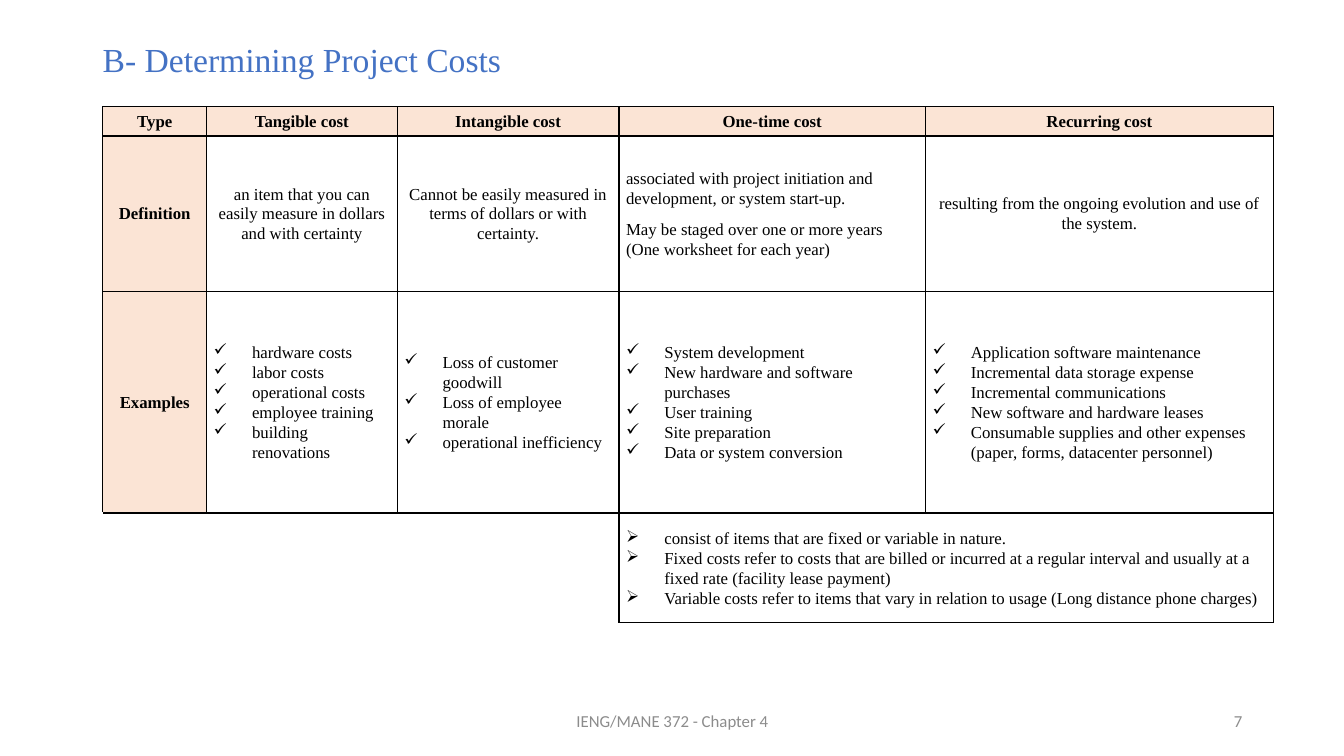
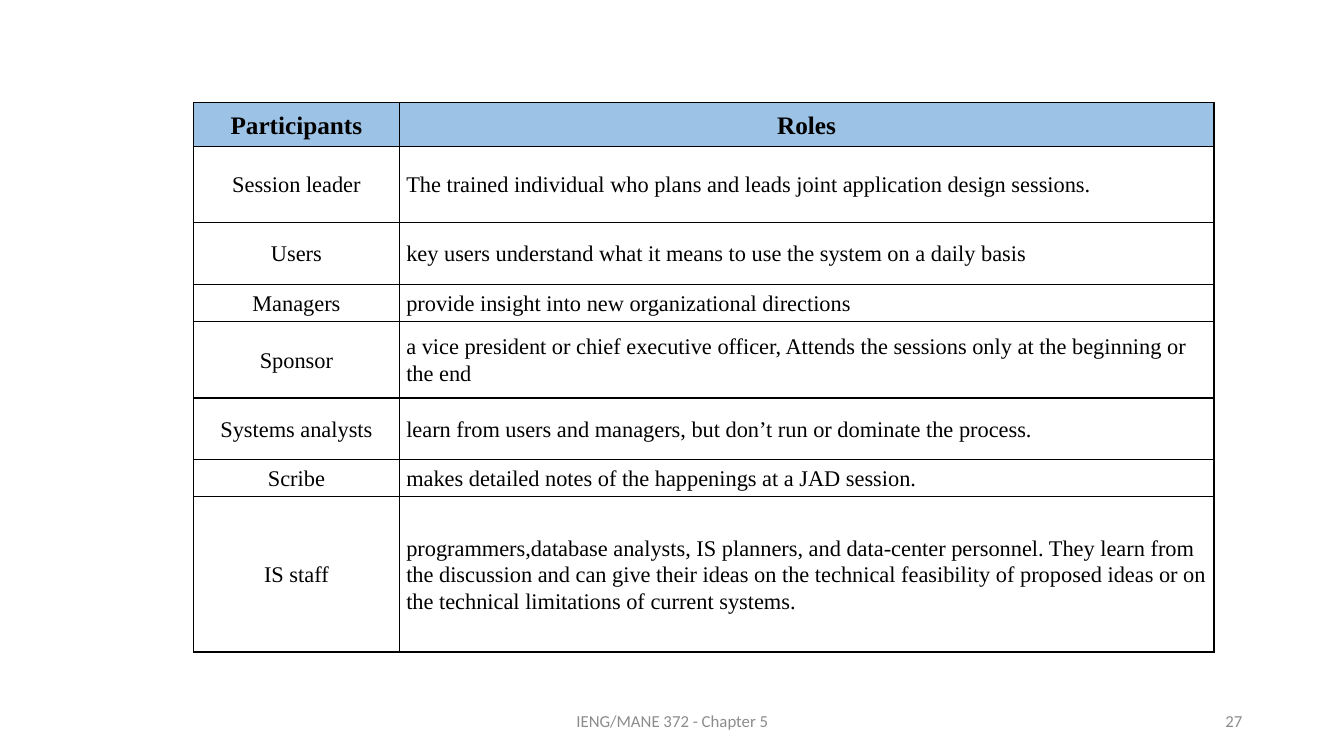
from dataclasses import dataclass

from lxml.etree import SubElement
from pptx import Presentation
from pptx.dml.color import RGBColor
from pptx.enum.text import MSO_ANCHOR, PP_ALIGN
from pptx.oxml.ns import qn
from pptx.util import Emu, Pt


@dataclass(frozen=True)
class Theme:
    serif: str = "Times New Roman"
    sans: str = "Calibri"
    title_color: str = "4472C4"
    footer_color: str = "8C8C8C"
    ink: str = "000000"
    paper: str = "FFFFFF"
    peach: str = "FBE4D5"
    sky: str = "9CC2E5"
    title: int = 24
    footer: int = 12
    cost_text: int = 12
    role_head: int = 18
    role_text: int = 16
    cell_line: float = 1.07
    cell_after: int = 8


@dataclass(frozen=True)
class Cell:
    lines: tuple = ()
    size: int = 12
    align: PP_ALIGN = PP_ALIGN.LEFT
    bold: bool = False
    fill: str = ""
    bullet: str = ""
    span: int = 1
    open_sides: str = ""


THEME = Theme()
PX = 9144  # 100 px to the inch
BULLET_INDENT = 38
CELL_INSET = 7


def heads(texts, size, fill):
    return [Cell((text,), size, PP_ALIGN.CENTER, True, fill) for text in texts]


def centred(text, size=THEME.cost_text):
    return Cell((text,), size, PP_ALIGN.CENTER)


def ticks(*lines):
    return Cell(lines, bullet="✓")


COST_TYPES = heads(
    ["Type", "Tangible cost", "Intangible cost", "One-time cost", "Recurring cost"],
    THEME.cost_text, THEME.peach)
DEFINITION, EXAMPLES = heads(["Definition", "Examples"], THEME.cost_text, THEME.peach)
COST_ROWS = [
    COST_TYPES,
    [
        DEFINITION,
        centred("an item that you can easily measure in dollars and with certainty"),
        centred("Cannot be easily measured in terms of dollars or with certainty."),
        Cell(("associated with project initiation and development, or system start-up.",
              "May be staged over one or more years (One worksheet for each year)")),
        centred("resulting from the ongoing evolution and use of the system."),
    ],
    [
        EXAMPLES,
        ticks("hardware costs", "labor costs", "operational costs",
              "employee training", "building renovations"),
        ticks("Loss of customer goodwill", "Loss of employee morale",
              "operational inefficiency"),
        ticks("System development", "New hardware and software purchases",
              "User training", "Site preparation", "Data or system conversion"),
        ticks("Application software maintenance", "Incremental data storage expense",
              "Incremental communications", "New software and hardware leases",
              "Consumable supplies and other expenses (paper, forms, datacenter personnel)"),
    ],
    [
        Cell(span=3, open_sides="LB"),
        Cell((
            "consist of items that are fixed or variable in nature.",
            "Fixed costs refer to costs that are billed or incurred at a regular interval "
            "and usually at a fixed rate (facility lease payment)",
            "Variable costs refer to items that vary in relation to usage "
            "(Long distance phone charges)",
        ), bullet="➢", span=2),
    ],
]

ROLES = [
    ("Session leader",
     "The trained individual who plans and leads joint application design sessions."),
    ("Users", "key users understand what it means to use the system on a daily basis"),
    ("Managers", "provide insight into new organizational directions"),
    ("Sponsor", "a vice president or chief executive officer, Attends the sessions only "
                "at the beginning or the end"),
    ("Systems analysts",
     "learn from users and managers, but don’t run or dominate the process."),
    ("Scribe", "makes detailed notes of the happenings at a JAD session."),
    ("IS staff",
     "programmers,database analysts, IS planners, and data-center personnel. They learn "
     "from the discussion and can give their ideas on the technical feasibility of "
     "proposed ideas or on the technical limitations of current systems."),
]
ROLE_ROWS = [heads(["Participants", "Roles"], THEME.role_head, THEME.sky)] + [
    [centred(name, THEME.role_text), Cell((role,), THEME.role_text)]
    for name, role in ROLES
]

SLIDES = [
    dict(title="B- Determining Project Costs", chapter=4, number=7, rows=COST_ROWS,
         left=102, top=106, widths=[103, 189, 220, 304, 345],
         heights=[29, 154, 220, 109]),
    dict(title="", chapter=5, number=27, rows=ROLE_ROWS,
         left=192, top=102, widths=[204, 808],
         heights=[43, 76, 61, 37, 76, 61, 37, 154]),
]


def px(length):
    return Emu(length * PX)


def write(para, text, *, size, font=THEME.serif, color=THEME.ink, bold=False,
          align=PP_ALIGN.LEFT, line=1.0, after=0, bullet=""):
    para.alignment = align
    para.line_spacing = line
    para.space_before = Pt(0)
    para.space_after = Pt(after)
    if bullet:
        properties = para._p.get_or_add_pPr()
        properties.set("marL", str(px(BULLET_INDENT)))
        properties.set("indent", str(-px(BULLET_INDENT)))
        SubElement(properties, qn("a:buChar"), char=bullet)
    span = para.add_run()
    span.text = text
    span.font.name = font
    span.font.size = Pt(size)
    span.font.bold = bold
    span.font.color.rgb = RGBColor.from_string(color)


def add_text(page, text, left, top, width, height, *, anchor=MSO_ANCHOR.MIDDLE, **style):
    box = page.shapes.add_textbox(px(left), px(top), px(width), px(height))
    frame = box.text_frame
    frame.word_wrap = True
    frame.vertical_anchor = anchor
    write(frame.paragraphs[0], text, **style)


def set_borders(table_cell, open_sides):
    """Rule all four sides; open sides take the paper colour."""
    properties = table_cell._tc.get_or_add_tcPr()
    for side in "LRTB":
        line = SubElement(properties, qn(f"a:ln{side}"), w=str(Pt(1)))
        fill = SubElement(line, qn("a:solidFill"))
        color = THEME.paper if side in open_sides else THEME.ink
        SubElement(fill, qn("a:srgbClr"), val=color)


def fill_cell(table_cell, cell):
    set_borders(table_cell, cell.open_sides)
    if cell.fill:
        table_cell.fill.solid()
        table_cell.fill.fore_color.rgb = RGBColor.from_string(cell.fill)
    else:
        table_cell.fill.background()
    table_cell.vertical_anchor = MSO_ANCHOR.MIDDLE
    table_cell.margin_left = table_cell.margin_right = px(CELL_INSET)
    table_cell.margin_top = table_cell.margin_bottom = 0


def write_cell(table_cell, cell):
    frame = table_cell.text_frame
    for index, text in enumerate(cell.lines):
        para = frame.add_paragraph() if index else frame.paragraphs[0]
        write(para, text, size=cell.size, bold=cell.bold, align=cell.align,
              line=THEME.cell_line, bullet=cell.bullet,
              after=0 if cell.bullet else THEME.cell_after)


def add_grid(page, rows, left, top, widths, heights):
    table = page.shapes.add_table(len(heights), len(widths), px(left), px(top),
                                  px(sum(widths)), px(sum(heights))).table
    table.first_row = table.horz_banding = False
    for column, width in zip(table.columns, widths):
        column.width = px(width)
    for row, height in zip(table.rows, heights):
        row.height = px(height)
    for row_index, cells in enumerate(rows):
        start = 0
        for cell in cells:
            end = start + cell.span
            for column_index in range(start, end):
                fill_cell(table.cell(row_index, column_index), cell)
            first = table.cell(row_index, start)
            if cell.span > 1:
                first.merge(table.cell(row_index, end - 1))
            write_cell(first, cell)
            start = end


def add_footer(page, chapter, number):
    style = dict(size=THEME.footer, font=THEME.sans, color=THEME.footer_color)
    add_text(page, f"IENG/MANE 372 - Chapter {chapter}", 442, 695, 450, 40,
             align=PP_ALIGN.CENTER, **style)
    add_text(page, str(number), 942, 695, 300, 40, align=PP_ALIGN.RIGHT, **style)


def add_page(deck, title, chapter, number, **grid):
    page = deck.slides.add_slide(deck.slide_layouts[6])
    if title:
        add_text(page, title, 92, 38, 1150, 50, anchor=MSO_ANCHOR.TOP, line=0.9,
                 size=THEME.title, color=THEME.title_color)
    add_footer(page, chapter, number)
    add_grid(page, **grid)


def main():
    deck = Presentation()
    deck.slide_width, deck.slide_height = px(1333), px(750)
    for content in SLIDES:
        add_page(deck, **content)
    deck.save("out.pptx")


if __name__ == "__main__":
    main()
